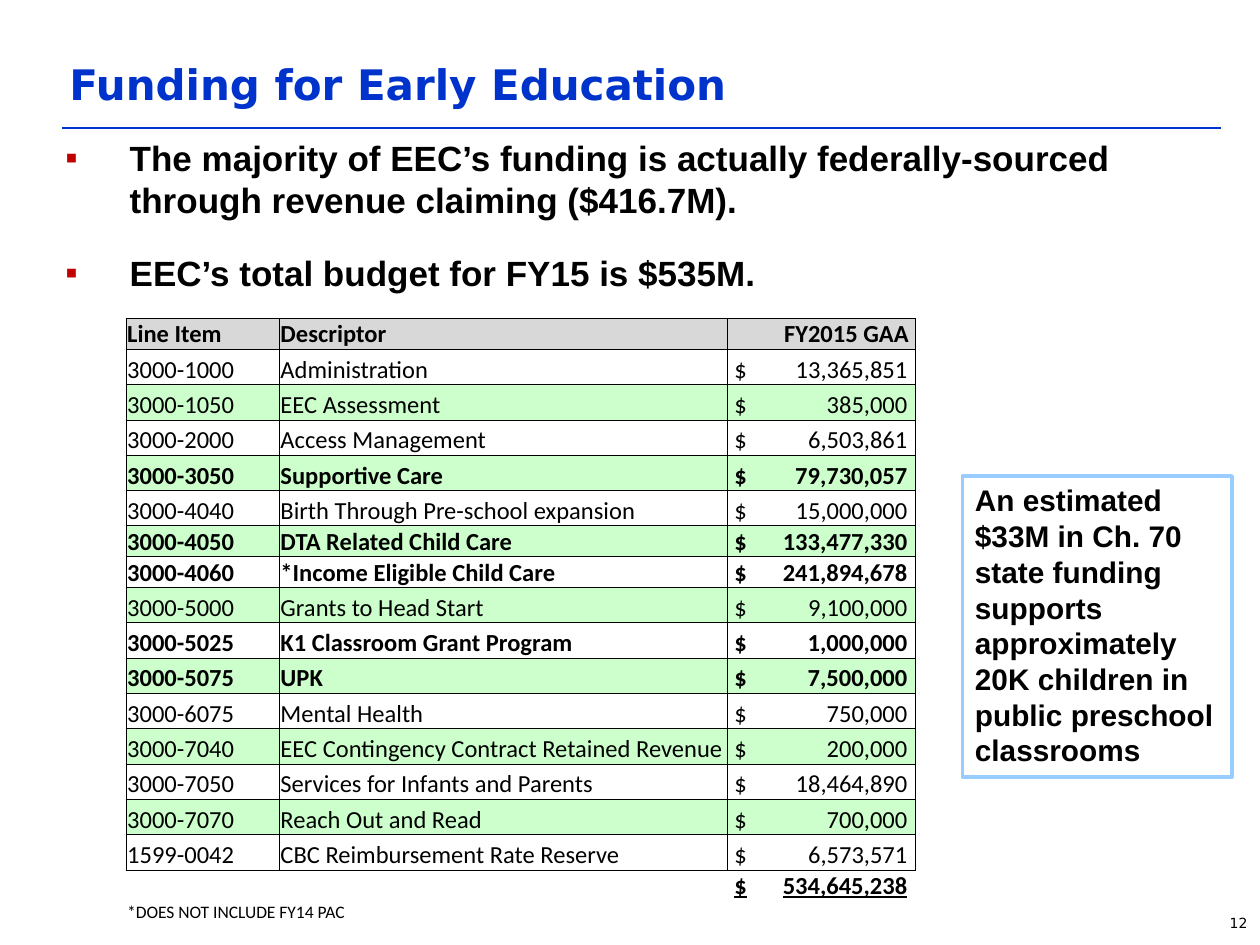
from lxml.etree import SubElement
from pptx import Presentation
from pptx.dml.color import RGBColor
from pptx.enum.shapes import MSO_CONNECTOR, MSO_SHAPE
from pptx.enum.text import MSO_ANCHOR, MSO_AUTO_SIZE, PP_ALIGN
from pptx.oxml.ns import qn
from pptx.util import Pt

COLORS = {
    "title": "0033CC", "text": "000000", "bullet": "C00000", "header": "D8D8D8",
    "band": "CCFFCC", "callout": "99CCFF", "white": "FFFFFF",
}
NO_GRID_STYLE = "{2D5ABB26-0587-4C30-8999-92F81FD0307C}"
BULLETS = [
    "The majority of EEC’s funding is actually federally-sourced "
    "through revenue claiming ($416.7M).",
    "EEC’s total budget for FY15 is $535M.",
]
HEADER = ("Line Item", "Descriptor", "FY2015 GAA")
ITEMS = [
    ("3000-1000", "Administration", "13,365,851"),
    ("3000-1050", "EEC Assessment", "385,000"),
    ("3000-2000", "Access Management", "6,503,861"),
    ("3000-3050", "Supportive Care", "79,730,057"),
    ("3000-4040", "Birth Through Pre-school expansion", "15,000,000"),
    ("3000-4050", "DTA Related Child Care", "133,477,330"),
    ("3000-4060", "*Income Eligible Child Care", "241,894,678"),
    ("3000-5000", "Grants to Head Start", "9,100,000"),
    ("3000-5025", "K1 Classroom Grant Program", "1,000,000"),
    ("3000-5075", "UPK", "7,500,000"),
    ("3000-6075", "Mental Health", "750,000"),
    ("3000-7040", "EEC Contingency Contract Retained Revenue", "200,000"),
    ("3000-7050", "Services for Infants and Parents", "18,464,890"),
    ("3000-7070", "Reach Out and Read", "700,000"),
    ("1599-0042", "CBC Reimbursement Rate Reserve", "6,573,571"),
]
TOTAL = "534,645,238"
FOOTNOTE = "*DOES NOT INCLUDE FY14 PAC"
BOLD_ITEMS = {"3000-3050", "3000-4050", "3000-4060", "3000-5025", "3000-5075"}
SHORT_ITEMS = {"3000-4050", "3000-4060"}
COL_WIDTHS = (87.6, 256, 107.8)
SHORT_ROW, TALL_ROW, NOTE_ROW = 17.6, 20.2, 13


def rgb(name):
    """Return the named colour."""
    return RGBColor.from_string(COLORS[name])


def add_run(p, text, size, font, color="text", bold=False, underline=False):
    """Append a formatted run to a paragraph."""
    r = p.add_run()
    r.text = text
    r.font.size, r.font.name = Pt(size), font
    r.font.bold, r.font.underline = bold, underline
    r.font.color.rgb = rgb(color)


def place(sp, box):
    """Move a shape into a box given in points."""
    sp.left, sp.top, sp.width, sp.height = map(Pt, box)


def add_title(slide, box):
    """Fill the title placeholder and draw the rule below it."""
    sp = slide.shapes.title
    place(sp, box)
    tf = sp.text_frame
    tf.auto_size, tf.vertical_anchor = MSO_AUTO_SIZE.NONE, MSO_ANCHOR.BOTTOM
    p = tf.paragraphs[0]
    p.alignment = PP_ALIGN.LEFT
    add_run(p, "Funding for Early Education", 24, "DejaVu Sans", "title", True)
    left, top, width, height = box
    y = Pt(top + height + 7.5)
    rule = slide.shapes.add_connector(
        MSO_CONNECTOR.STRAIGHT, Pt(left + 3), y, Pt(left + 665.5), y)
    rule.line.color.rgb, rule.line.width = rgb("title"), Pt(0.75)
    SubElement(rule._element.spPr, qn("a:effectLst"))


def add_bullets(slide, box):
    """Fill the body placeholder with the bulleted statements."""
    sp = slide.placeholders[1]
    place(sp, box)
    tf = sp.text_frame
    tf.auto_size = MSO_AUTO_SIZE.NONE
    for i, text in enumerate(BULLETS):
        p = tf.add_paragraph() if i else tf.paragraphs[0]
        p.level = 1
        p.space_before = Pt(18 if i else 0)
        pPr = p._p.get_or_add_pPr()
        pPr.set("marL", str(Pt(36.7)))
        pPr.set("indent", str(-Pt(36.7)))
        clr = SubElement(pPr, qn("a:buClr"))
        SubElement(clr, qn("a:srgbClr"), val=COLORS["bullet"])
        SubElement(pPr, qn("a:buFont"), typeface="Arial")
        SubElement(pPr, qn("a:buChar"), char="▪")
        add_run(p, text, 20, "Arial", bold=True)


def set_borders(cell, sides):
    """Draw thin black lines on the given sides and clear the others."""
    tcPr = cell._tc.get_or_add_tcPr()
    for i, side in enumerate("LRTB"):
        ln = tcPr.makeelement(qn(f"a:ln{side}"), {"w": str(Pt(0.5))})
        if side in sides:
            fill = SubElement(ln, qn("a:solidFill"))
            SubElement(fill, qn("a:srgbClr"), val=COLORS["text"])
        else:
            SubElement(ln, qn("a:noFill"))
        tcPr.insert(i, ln)


def fill_cell(cell, text, fill=None, sides="LRTB", size=14, amount=False, **style):
    """Write, colour and border one table cell."""
    cell.margin_left = Pt(4 if amount else 0.7)
    cell.margin_right = cell.margin_top = Pt(0.7)
    cell.margin_bottom = 0
    cell.vertical_anchor = MSO_ANCHOR.BOTTOM
    if fill:
        cell.fill.solid()
        cell.fill.fore_color.rgb = rgb(fill)
    else:
        cell.fill.background()
    set_borders(cell, sides)
    p = cell.text_frame.paragraphs[0]
    if amount:
        tabs = SubElement(p._p.get_or_add_pPr(), qn("a:tabLst"))
        SubElement(tabs, qn("a:tab"), pos=str(Pt(99)), algn="r")
        text = f"$\t{text}"
    if text:
        add_run(p, text, size, "Calibri", **style)
    else:
        SubElement(p._p, qn("a:endParaRPr"), sz=str(size * 100))


def add_budget_table(slide, left, top):
    """Build the budget table with its total and footnote rows."""
    heights = [SHORT_ROW]
    heights += [SHORT_ROW if item[0] in SHORT_ITEMS else TALL_ROW for item in ITEMS]
    heights += [SHORT_ROW, NOTE_ROW]
    frame = slide.shapes.add_table(
        len(heights), len(COL_WIDTHS), Pt(left), Pt(top),
        Pt(sum(COL_WIDTHS)), Pt(sum(heights)))
    table = frame.table
    table.first_row = table.horz_banding = False
    table._tbl.tblPr.find(qn("a:tableStyleId")).text = NO_GRID_STYLE
    for col, width in zip(table.columns, COL_WIDTHS):
        col.width = Pt(width)
    for row, height in zip(table.rows, heights):
        row.height = Pt(height)
    for c, text in enumerate(HEADER):
        fill_cell(table.cell(0, c), text, "header", bold=True)
    gaa = table.cell(0, 2)
    gaa.margin_right = Pt(4)
    gaa.text_frame.paragraphs[0].alignment = PP_ALIGN.RIGHT
    for i, item in enumerate(ITEMS, 1):
        for c, text in enumerate(item):
            fill_cell(table.cell(i, c), text, None if i % 2 else "band",
                      amount=c == 2, bold=item[0] in BOLD_ITEMS)
    total, note = len(heights) - 2, len(heights) - 1
    for c, text in enumerate(("", "", TOTAL)):
        fill_cell(table.cell(total, c), text, sides="T", amount=c == 2,
                  bold=True, underline=True)
    table.cell(note, 0).merge(table.cell(note, 2))
    for c, text in enumerate((FOOTNOTE, "", "")):
        fill_cell(table.cell(note, c), text, sides="", size=10)


def add_callout(slide, box):
    """Add the outlined remark beside the table."""
    sp = slide.shapes.add_shape(MSO_SHAPE.RECTANGLE, *map(Pt, box))
    sp.shadow.inherit = False
    sp.fill.solid()
    sp.fill.fore_color.rgb = rgb("white")
    sp.line.color.rgb, sp.line.width = rgb("callout"), Pt(2)
    tf = sp.text_frame
    tf.word_wrap, tf.auto_size = True, MSO_AUTO_SIZE.SHAPE_TO_FIT_TEXT
    tf.vertical_anchor = MSO_ANCHOR.TOP
    p = tf.paragraphs[0]
    p.alignment = PP_ALIGN.LEFT
    add_run(p, "An estimated $33M in Ch. 70 state funding supports approximately "
            "20K children in public preschool classrooms", 17, "Arial", bold=True)


def add_page_number(slide, box):
    """Add the page number in the bottom corner."""
    tf = slide.shapes.add_textbox(*map(Pt, box)).text_frame
    tf.word_wrap = True
    p = tf.paragraphs[0]
    p.alignment = PP_ALIGN.RIGHT
    add_run(p, "12", 8, "DejaVu Sans")


def main():
    """Build and save the slide."""
    prs = Presentation()
    prs.slide_width, prs.slide_height = Pt(720), Pt(540)
    slide = prs.slides.add_slide(prs.slide_layouts[1])
    add_page_number(slide, (568, 519, 152, 21))
    add_budget_table(slide, 72, 182)
    add_title(slide, (32.4, 8.6, 597, 57))
    add_bullets(slide, (30.2, 74.2, 651, 185))
    add_callout(slide, (550, 272, 154, 172))
    prs.save("out.pptx")


if __name__ == "__main__":
    main()
